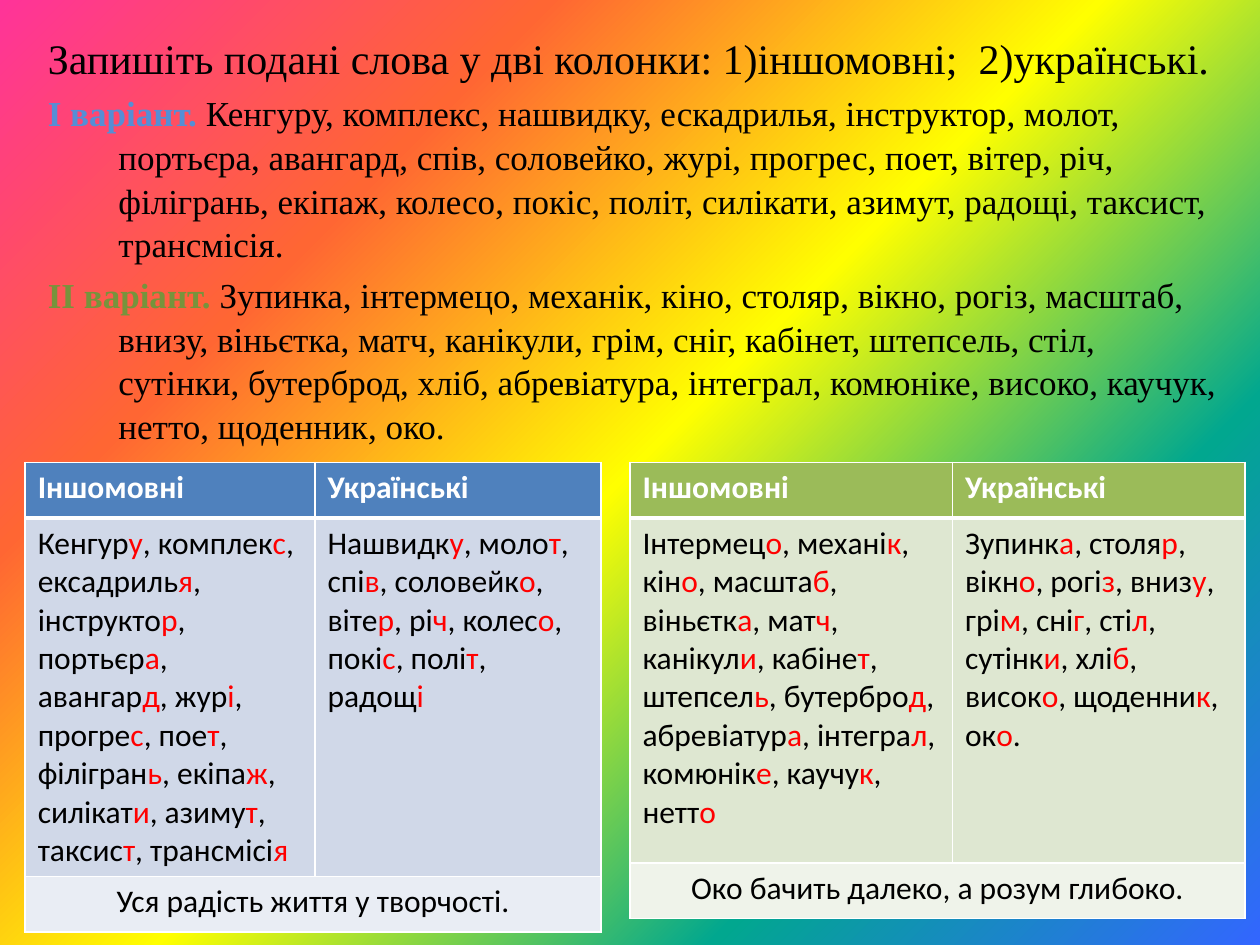
from lxml.etree import SubElement
from pptx import Presentation
from pptx.dml.color import RGBColor as RGB
from pptx.enum.text import MSO_AUTO_SIZE, PP_ALIGN
from pptx.oxml import parse_xml
from pptx.oxml.ns import nsdecls, qn
from pptx.util import Inches, Pt

THEME = {
    "heading_font": "Times New Roman", "table_font": "Calibri",
    "heading_size": 24, "task_size": 20, "table_size": 18,
    "text": "000000", "accent": "FF0000", "light": "FFFFFF",
    "rainbow": [(0, "FF3399"), (25, "FF6633"), (50, "FFFF00"),
                (75, "01A78F"), (100, "3366FF")],
}

# Content
INSTRUCTION = "Запишіть подані слова у дві колонки: 1)іншомовні;  2)українські."
VARIANTS = [
    ("І варіант. ", "558ED5",
     "Кенгуру, комплекс, нашвидку, ескадрилья, інструктор, молот, портьєра, "
     "авангард, спів, соловейко, журі, прогрес, поет, вітер, річ, філігрань, "
     "екіпаж, колесо, покіс, політ, силікати, азимут, радощі, таксист, трансмісія."),
    ("ІІ варіант. ", "77933C",
     "Зупинка, інтермецо, механік, кіно, столяр, вікно, рогіз, масштаб, внизу, "
     "віньєтка, матч, канікули, грім, сніг, кабінет, штепсель, стіл, сутінки, "
     "бутерброд, хліб, абревіатура, інтеграл, комюніке, високо, каучук, нетто, "
     "щоденник, око."),
]
HEADERS = ["Іншомовні", "Українські"]
ANSWERS = [
    {"left": 5, "columns": [2.56, 2.32], "fills": ["9BBB59", "DEE7D1", "EFF3EA"],
     "words": [
         "Інтермецо, механік, кіно, масштаб, віньєтка, матч, канікули, кабінет, "
         "штепсель, бутерброд, абревіатура, інтеграл, комюніке, каучук, нетто",
         "Зупинка, столяр, вікно, рогіз, внизу, грім, сніг, стіл, сутінки, хліб, "
         "високо, щоденник, око."],
     "saying": "Око бачить далеко, а розум глибоко."},
    {"left": 0.2, "columns": [2.3, 2.27], "fills": ["4F81BD", "D0D8E8", "E9EDF4"],
     "words": [
         "Кенгуру, комплекс, ексадрилья, інструктор, портьєра, авангард, журі, "
         "прогрес, поет, філігрань, екіпаж, силікати, азимут, таксист, трансмісія",
         "Нашвидку, молот, спів, соловейко, вітер, річ, колесо, покіс, політ, радощі"],
     "saying": "Уся радість життя у творчості."},
]
TABLE_TOP = 3.67
ROW_HEIGHTS = [0.44, 2.74, 0.44]


def add_run(paragraph, text, font, size, color, bold=False):
    run = paragraph.add_run()
    run.text = text
    run.font.name, run.font.size, run.font.bold = font, Pt(size), bold
    run.font.color.rgb = RGB.from_string(color)


def add_cell_text(paragraph, text, color=THEME["text"], bold=False):
    add_run(paragraph, text, THEME["table_font"], THEME["table_size"], color, bold)


def add_words(paragraph, words):
    """Write a word list with the last letter of every word in the accent colour."""
    ending = "." if words.endswith(".") else ""
    lead = ""
    for word in words.rstrip(".").split(", "):
        add_cell_text(paragraph, lead + word[:-1])
        add_cell_text(paragraph, word[-1], THEME["accent"])
        lead = ", "
    if ending:
        add_cell_text(paragraph, ending)


def style_cell(cell, fill, bottom_width):
    cell.fill.solid()
    cell.fill.fore_color.rgb = RGB.from_string(fill)
    properties = cell._tc.get_or_add_tcPr()
    for position, side in enumerate("LRTB"):
        width = bottom_width if side == "B" else 1
        properties.insert(position, parse_xml(
            f'<a:ln{side} {nsdecls("a")} w="{Pt(width)}"><a:solidFill>'
            f'<a:srgbClr val="{THEME["light"]}"/></a:solidFill></a:ln{side}>'))


def add_answers(slide, answer):
    table = slide.shapes.add_table(
        len(ROW_HEIGHTS), len(HEADERS), Inches(answer["left"]), Inches(TABLE_TOP),
        Inches(sum(answer["columns"])), Inches(sum(ROW_HEIGHTS))).table
    table.horz_banding = False
    for column, width in zip(table.columns, answer["columns"]):
        column.width = Inches(width)
    for index, (row, height) in enumerate(zip(table.rows, ROW_HEIGHTS)):
        row.height = Inches(height)
        for cell in row.cells:
            style_cell(cell, answer["fills"][index], 3 if index == 0 else 1)
    for index, (header, words) in enumerate(zip(HEADERS, answer["words"])):
        add_cell_text(table.cell(0, index).text_frame.paragraphs[0], header,
                      THEME["light"], True)
        add_words(table.cell(1, index).text_frame.paragraphs[0], words)
    table.cell(2, 0).merge(table.cell(2, 1))
    saying = table.cell(2, 0).text_frame.paragraphs[0]
    saying.alignment = PP_ALIGN.CENTER
    add_cell_text(saying, answer["saying"])


def hang(paragraph, indent):
    properties = paragraph._p.get_or_add_pPr()
    properties.set("marL", str(Inches(indent)))
    properties.set("indent", str(-Inches(indent)))
    SubElement(properties, qn("a:buNone"))


def paint_background(slide):
    fill = slide.background.fill
    fill.gradient()
    fill.gradient_angle = 315
    stops = slide.element.xpath(".//a:gsLst")[0]
    for stop in list(stops):
        stops.remove(stop)
    for percent, color in THEME["rainbow"]:
        stop = SubElement(stops, qn("a:gs"), pos=str(percent * 1000))
        SubElement(stop, qn("a:srgbClr"), val=color)


def write_task(task):
    task.left, task.top = Inches(0.28), Inches(0.21)
    task.width, task.height = Inches(9.53), Inches(3.46)
    frame = task.text_frame
    frame.word_wrap = True
    frame.auto_size = MSO_AUTO_SIZE.NONE
    heading = frame.paragraphs[0]
    hang(heading, 0.38)
    heading.space_before = Pt(0)
    add_run(heading, INSTRUCTION, THEME["heading_font"], THEME["heading_size"],
            THEME["text"])
    for label, color, words in VARIANTS:
        variant = frame.add_paragraph()
        hang(variant, 0.56)
        variant.space_before = Pt(4)
        variant.line_spacing = 1.04
        add_run(variant, label, THEME["heading_font"], THEME["task_size"], color, True)
        add_run(variant, words, THEME["heading_font"], THEME["task_size"], THEME["text"])


def main():
    deck = Presentation()
    deck.slide_width, deck.slide_height = Inches(10), Inches(7.5)
    slide = deck.slides.add_slide(deck.slide_layouts[1])
    paint_background(slide)

    # The task fills the body; the slide has no separate title
    title = slide.shapes.title.element
    title.getparent().remove(title)
    write_task(slide.placeholders[1])

    # Answer tables
    for answer in ANSWERS:
        add_answers(slide, answer)
    deck.save("out.pptx")


if __name__ == "__main__":
    main()
